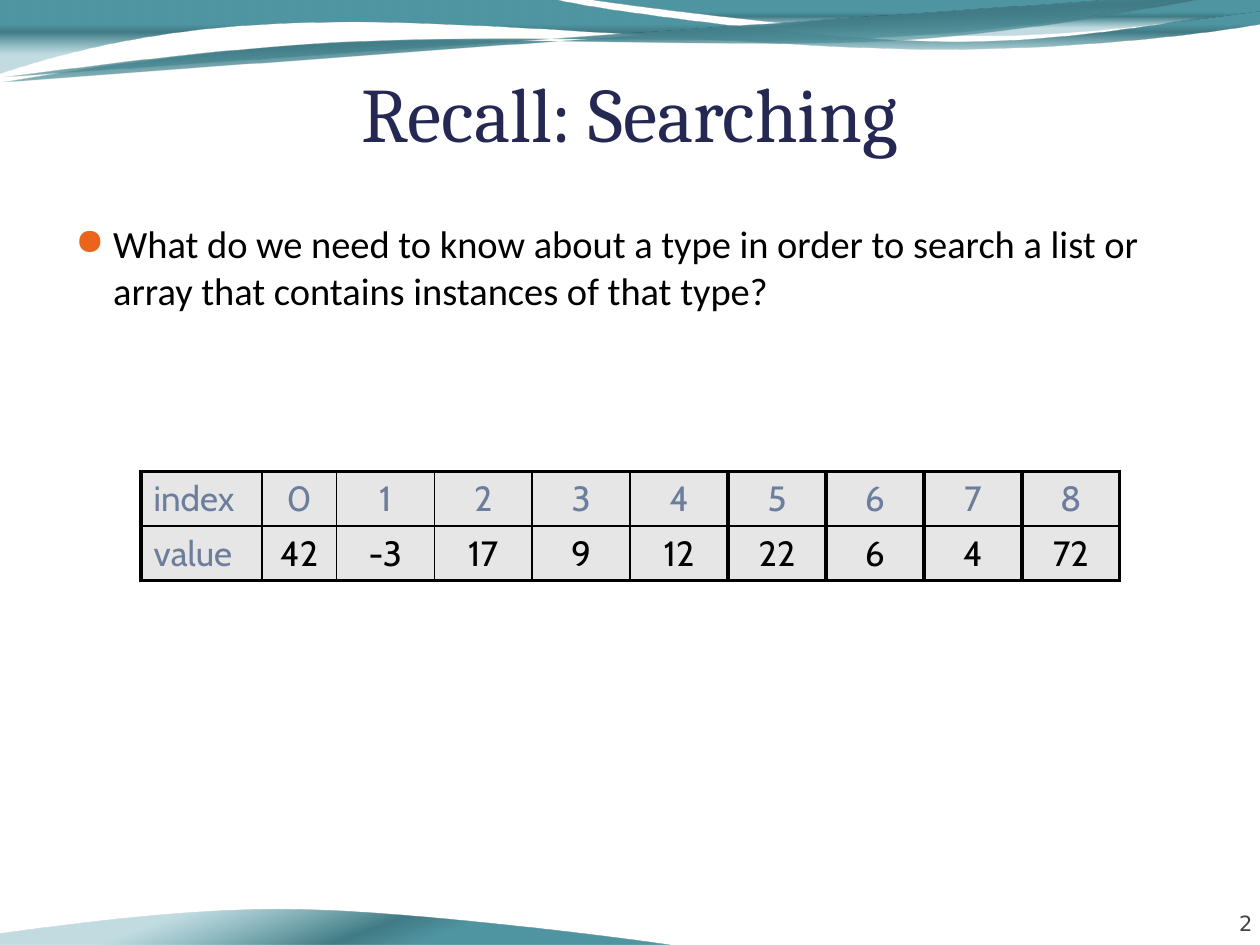
from math import cos, radians, sin

from lxml import etree
from pptx import Presentation
from pptx.dml.color import RGBColor
from pptx.enum.text import MSO_ANCHOR, PP_ALIGN
from pptx.oxml import parse_xml
from pptx.oxml.ns import nsdecls, qn
from pptx.util import Inches, Pt

LEFT, CENTER, RIGHT = PP_ALIGN.LEFT, PP_ALIGN.CENTER, PP_ALIGN.RIGHT
TOP, BOTTOM = MSO_ANCHOR.TOP, MSO_ANCHOR.BOTTOM

BLACK = RGBColor(0x00, 0x00, 0x00)
NAVY = RGBColor(0x24, 0x28, 0x52)
ORANGE = RGBColor(0xEB, 0x64, 0x1B)
SLATE = RGBColor(0x6C, 0x7E, 0x9C)
GRAY = RGBColor(0x42, 0x42, 0x42)
PALE = RGBColor(0xE6, 0xE6, 0xE6)
TEAL = RGBColor(0x50, 0x96, 0xA2)
DEEP_TEAL = RGBColor(0x41, 0x7B, 0x85)
LIGHT_TEAL = RGBColor(0x5A, 0xA2, 0xAE)
WAVE_STOPS = [(33, TEAL, 100), (44, DEEP_TEAL, 100), (74, LIGHT_TEAL, 37)]

BAND = [(0, 0), (4.4, 0), (4.76, 0.09, 6.64, 0.33, 7.58, 0.33),
        (8.53, 0.33, 9.58, 0.14, 10, 0.05), (10.01, 0.19),
        (9.83, 0.23, 8.7, 0.39, 7.46, 0.39), (6.22, 0.39, 3.82, 0.15, 2.57, 0.18),
        (1.29, 0.19, 0.46, 0.43, -0.01, 0.58), (0, 0)]
CREST = [(4.67, 0), (4.98, 0.05, 6.74, 0.27, 7.63, 0.28),
         (8.52, 0.3, 9.61, 0.14, 10, 0.09), (10, 0), (4.67, 0)]
LOWER_ARC = [(0.01, 0.65), (0.5, 0.57, 1.6, 0.39, 2.79, 0.34),
             (3.98, 0.28, 5.93, 0.39, 7.14, 0.32), (8.34, 0.25, 9.41, 0, 10, -0.08)]
UPPER_ARC = [(0.01, 0.61), (0.49, 0.56, 1.66, 0.38, 2.85, 0.33),
             (4.04, 0.27, 5.97, 0.36, 7.16, 0.29), (8.36, 0.22, 9.41, -0.01, 10, -0.08)]
FOOT = [(5.32, 7.5), (5.01, 7.45, 3.25, 7.23, 2.36, 7.22),
        (1.47, 7.2, 0.38, 7.36, -0.01, 7.41), (-0.01, 7.5), (5.32, 7.5)]
WAVES = [((-0.01, 0, 10.02, 0.58), BAND, 0, 90),
         ((4.67, 0, 5.33, 0.3), CREST, 0, 90),
         ((0, 0.16, 10.02, 0.28), LOWER_ARC, 357.3, 90),
         ((0, 0.16, 10.01, 0.25), UPPER_ARC, 357.3, 90),
         ((-0.01, 7.2, 5.33, 0.3), FOOT, 180, 70)]

ROWS = [["index", "0", "1", "2", "3", "4", "5", "6", "7", "8"],
        ["value", "42", "-3", "17", "9", "12", "22", "6", "4", "72"]]
THIN, THICK = 1, 2.25


def write(tf, text, size, font, color, align=LEFT):
    """Put one formatted run in the first paragraph and return the paragraph."""
    p = tf.paragraphs[0]
    p.alignment = align
    r = p.add_run()
    r.text = text
    r.font.size = Pt(size)
    r.font.name = font
    r.font.color.rgb = color
    return p


def add_text(slide, box, text, anchor=TOP, insets=(0.1, 0.05, 0.1, 0.05), **fmt):
    """Add a wrapping text box and return its paragraph."""
    tf = slide.shapes.add_textbox(*map(Inches, box)).text_frame
    tf.word_wrap = True
    tf.vertical_anchor = anchor
    tf.margin_left, tf.margin_top, tf.margin_right, tf.margin_bottom = map(Inches, insets)
    return write(tf, text, **fmt)


def add_bullet(p, indent, color):
    """Give a paragraph a hanging round bullet."""
    pPr = p._p.get_or_add_pPr()
    pPr.set("marL", str(Inches(indent)))
    pPr.set("indent", str(-Inches(indent)))
    for xml in (f'<a:buClr {nsdecls("a")}><a:srgbClr val="{color}"/></a:buClr>',
                f'<a:buSzPct {nsdecls("a")} val="95000"/>',
                f'<a:buFont {nsdecls("a")} typeface="OpenSymbol"/>',
                f'<a:buChar {nsdecls("a")} char="●"/>'):
        pPr.append(parse_xml(xml))


def to_local(x, y, box, rotation):
    """Turn a slide point into a point of the unrotated box."""
    left, top, width, height = box
    dx, dy = x - left - width / 2, y - top - height / 2
    a = radians(-rotation)
    return (Inches(width / 2 + dx * cos(a) - dy * sin(a)),
            Inches(height / 2 + dx * sin(a) + dy * cos(a)))


def add_wave(slide, box, outline, rotation, angle):
    """Draw one curved wave with the teal gradient in its box."""
    left, top, width, height = map(Inches, box)
    builder = slide.shapes.build_freeform(left, top)
    builder.add_line_segments([(left + width, top + height)], close=False)
    sp = builder.convert_to_shape()
    sp.rotation = rotation
    sp.shadow.inherit = False
    sp.line.fill.background()
    geometry = sp._element.spPr.find(qn("a:custGeom"))
    path = geometry.find(".//" + qn("a:path"))
    for child in list(path):
        path.remove(child)
    for i, part in enumerate(outline):
        kind = "cubicBezTo" if len(part) == 6 else "lnTo" if i else "moveTo"
        step = etree.SubElement(path, qn(f"a:{kind}"))
        for point in zip(part[::2], part[1::2]):
            x, y = to_local(*point, box, rotation)
            etree.SubElement(step, qn("a:pt"), x=str(x), y=str(y))
    if outline[0] == outline[-1]:
        etree.SubElement(path, qn("a:close"))
    stops = "".join(
        f'<a:gs pos="{pos * 1000}"><a:srgbClr val="{color}">'
        f'<a:alpha val="{alpha * 1000}"/></a:srgbClr></a:gs>'
        for pos, color, alpha in WAVE_STOPS)
    geometry.addnext(parse_xml(
        f'<a:gradFill {nsdecls("a")} rotWithShape="1"><a:gsLst>{stops}</a:gsLst>'
        f'<a:lin ang="{angle * 60000}" scaled="0"/></a:gradFill>'))


def add_frame(slide, width, height):
    """Add the slide number and the waves at the top and bottom edges."""
    add_text(slide, (width - 0.89, height - 0.47, 0.83, 0.4), "2", anchor=BOTTOM,
             insets=(0, 0, 0, 0), size=12, font="DejaVu Sans", color=GRAY, align=RIGHT)
    for wave in WAVES:
        add_wave(slide, *wave)


def set_borders(cell, **widths):
    """Draw black borders on the sides L, R, T and B of a cell."""
    tcPr = cell._tc.get_or_add_tcPr()
    for side, width in widths.items():
        ln = etree.SubElement(tcPr, qn(f"a:ln{side}"), w=str(Pt(width)))
        fill = etree.SubElement(ln, qn("a:solidFill"))
        etree.SubElement(fill, qn("a:srgbClr"), val=str(BLACK))


def add_array_table(slide, left, top, width, height):
    """Add the table of array indexes and values."""
    n_rows, n_cols = len(ROWS), len(ROWS[0])
    table = slide.shapes.add_table(
        n_rows, n_cols, *map(Inches, (left, top, width, height))).table
    table.first_row = table.horz_banding = False
    label_w, first_w = 0.96, 0.59
    other_w = (width - label_w - first_w) / (n_cols - 2)
    for col, w in zip(table.columns, [label_w, first_w] + [other_w] * (n_cols - 2)):
        col.width = Inches(w)
    v_lines = [THICK] + [THIN] * 5 + [THICK] * (n_cols - 5)
    h_lines = [THICK, THIN, THICK]
    for i, row in enumerate(ROWS):
        for j, text in enumerate(row):
            cell = table.cell(i, j)
            set_borders(cell, L=v_lines[j], R=v_lines[j + 1], T=h_lines[i], B=h_lines[i + 1])
            cell.fill.solid()
            cell.fill.fore_color.rgb = PALE
            write(cell.text_frame, text, size=20, font="Cabin",
                  color=BLACK if i and j else SLATE, align=CENTER if j else LEFT)


def add_content(slide, left, top, width):
    """Add the title, the question and the table."""
    add_text(slide, (left, top, width, 0.77), "Recall: Searching", anchor=BOTTOM,
             insets=(0, 0.05, 0, 0), size=44, font="Cambria", color=NAVY, align=CENTER)
    p = add_text(slide, (left, top + 1.22, width - 0.25, 5.46),
                 "What do we need to know about a type in order to search a list or "
                 "array that contains instances of that type?",
                 size=22, font="Calibri", color=BLACK)
    add_bullet(p, 0.3, ORANGE)
    add_array_table(slide, left + 0.62, top + 3.26, 7.77, 0.87)


def main():
    """Build the slide and save it."""
    width, height = 10, 7.5
    prs = Presentation()
    prs.slide_width, prs.slide_height = Inches(width), Inches(height)
    slide = prs.slides.add_slide(prs.slide_layouts[6])
    add_frame(slide, width, height)
    add_content(slide, 0.5, 0.48, 9)
    prs.save("out.pptx")


if __name__ == "__main__":
    main()
